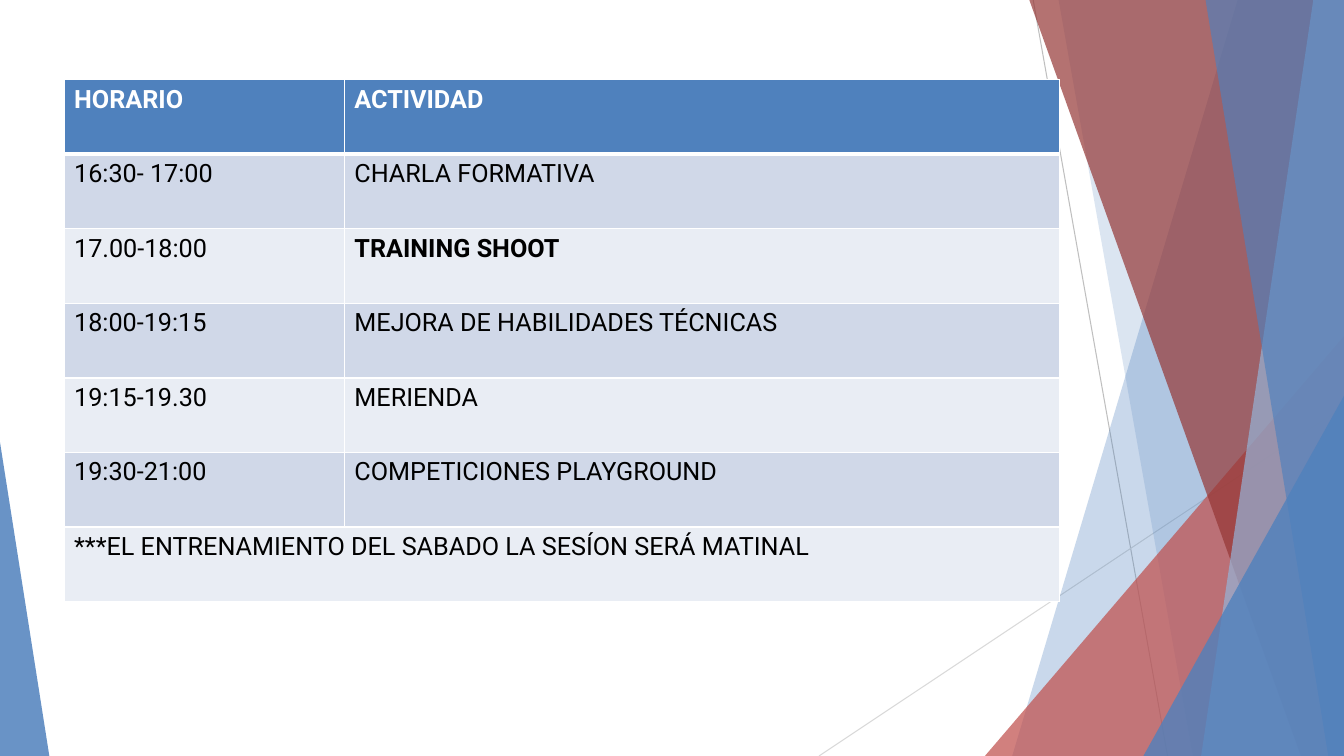
"""Build the training timetable slide with its faceted side decoration."""
from lxml.etree import SubElement
from pptx import Presentation
from pptx.dml.color import RGBColor
from pptx.enum.shapes import MSO_CONNECTOR as Connector, MSO_SHAPE as Shape
from pptx.oxml import parse_xml
from pptx.oxml.ns import nsdecls, qn
from pptx.util import Pt

PX = 9525
WIDTH, HEIGHT = 1280, 720
WHITE = RGBColor(0xFF, 0xFF, 0xFF)
BLACK = RGBColor(0x00, 0x00, 0x00)
BLUE = RGBColor(0x4F, 0x81, 0xBD)
PALE_BLUE = RGBColor(0x95, 0xB3, 0xD7)
RED = RGBColor(0xC0, 0x50, 0x4D)
DARK_RED = RGBColor(0x95, 0x37, 0x35)
GREY = RGBColor(0xBF, 0xBF, 0xBF)
LIGHT_GREY = RGBColor(0xD9, 0xD9, 0xD9)
BANDS = (RGBColor(0xE9, 0xED, 0xF4), RGBColor(0xD0, 0xD8, 0xE8))

COLUMNS = (267, 681)
ROW_HEIGHT = 71
SCHEDULE = (
    ("HORARIO", "ACTIVIDAD"),
    ("16:30- 17:00", "CHARLA FORMATIVA"),
    ("17.00-18:00", "TRAINING SHOOT"),
    ("18:00-19:15", "MEJORA DE HABILIDADES TÉCNICAS"),
    ("19:15-19.30", "MERIENDA"),
    ("19:30-21:00", "COMPETICIONES PLAYGROUND"),
    ("***EL ENTRENAMIENTO DEL SABADO LA SESÍON SERÁ MATINAL", ""),
)
BOLD_TEXTS = SCHEDULE[0] + ("TRAINING SHOOT",)


def set_values(target, values):
    """Set each named attribute of the target."""
    for name, value in values.items():
        setattr(target, name, value)


def paint(shape, color, opacity):
    """Give a shape a translucent fill, no outline and no shadow."""
    shape.shadow.inherit = False
    shape.line.fill.background()
    shape.fill.solid()
    shape.fill.fore_color.rgb = color
    tint = shape.fill._xPr.find(qn("a:solidFill"))[0]
    SubElement(tint, qn("a:alpha"), val=str(opacity * 1000))


def add_line(page, start, end, color):
    """Draw a thin straight line."""
    points = [value * PX for value in start + end]
    line = page.shapes.add_connector(Connector.STRAIGHT, *points)
    line.line.color.rgb = color
    line.line.width = Pt(0.75)
    SubElement(line._element.spPr, qn("a:effectLst"))


def add_facet(page, top_x, bottom_x, color, opacity):
    """Draw a full-height facet between a slanted edge and the right side."""
    builder = page.shapes.build_freeform(top_x, -1, scale=PX)
    corners = [(WIDTH, -1), (WIDTH, HEIGHT), (bottom_x, HEIGHT)]
    builder.add_line_segments(corners, close=True)
    paint(builder.convert_to_shape(), color, opacity)


def add_corner(page, left, top, width, apex, color, opacity):
    """Draw a triangle standing on the bottom edge of the slide."""
    bounds = [value * PX for value in (left, top, width, HEIGHT - top)]
    corner = page.shapes.add_shape(Shape.ISOSCELES_TRIANGLE, *bounds)
    corner.adjustments[0] = apex
    paint(corner, color, opacity)


def add_borders(cell, widths):
    """Draw white cell borders with the given widths in points."""
    properties = cell._tc.get_or_add_tcPr()
    for index, (side, width) in enumerate(widths.items()):
        properties.insert(index, parse_xml(
            f'<a:ln{side} {nsdecls("a")} w="{Pt(width)}"><a:solidFill>'
            f'<a:srgbClr val="{WHITE}"/></a:solidFill></a:ln{side}>'))


def fill_cell(cell, text, row):
    """Write and format one timetable cell."""
    cell.fill.solid()
    cell.fill.fore_color.rgb = BANDS[row % 2] if row else BLUE
    add_borders(cell, {"L": 1, "R": 1, "T": 3 if row == 1 else 1,
                       "B": 1 if row else 3})
    if text:
        span = cell.text_frame.paragraphs[0].add_run()
        span.text = text
        set_values(span.font, {"name": "Roboto", "size": Pt(18),
                               "bold": text in BOLD_TEXTS})
        span.font.color.rgb = BLACK if row else WHITE


def add_timetable(page, left, top):
    """Add the timetable with a closing note across both columns."""
    bounds = (left, top, sum(COLUMNS), ROW_HEIGHT * len(SCHEDULE))
    frame = page.shapes.add_table(len(SCHEDULE), len(COLUMNS),
                                  *(value * PX for value in bounds))
    table = frame.table
    set_values(table, {"first_row": False, "horz_banding": False})
    for column, width in zip(table.columns, COLUMNS):
        column.width = width * PX
    for row, texts in enumerate(SCHEDULE):
        table.rows[row].height = ROW_HEIGHT * PX
        for column, text in enumerate(texts):
            fill_cell(table.cell(row, column), text, row)
    last = len(SCHEDULE) - 1
    table.cell(last, 0).merge(table.cell(last, 1))


def main():
    """Build and save the deck."""
    deck = Presentation()
    set_values(deck, {"slide_width": WIDTH * PX, "slide_height": HEIGHT * PX})
    page = deck.slides.add_slide(deck.slide_layouts[6])
    add_line(page, (984, 0), (1112, HEIGHT), GREY)
    add_line(page, (WIDTH, 387), (780, HEIGHT), LIGHT_GREY)
    add_facet(page, 1179, 964, BLUE, 30)
    add_facet(page, 1008, 1136, BLUE, 20)
    add_corner(page, 938, 320, 342, 1, RED, 72)
    add_facet(page, 980, 1239, DARK_RED, 70)
    add_facet(page, 1251, 1144, PALE_BLUE, 70)
    add_facet(page, 1148, 1265, BLUE, 65)
    add_corner(page, 1089, 377, 191, 1, BLUE, 80)
    add_corner(page, 0, 421, 47, 0, BLUE, 85)
    add_timetable(page, 61, 76)
    deck.save("out.pptx")


if __name__ == "__main__":
    main()
